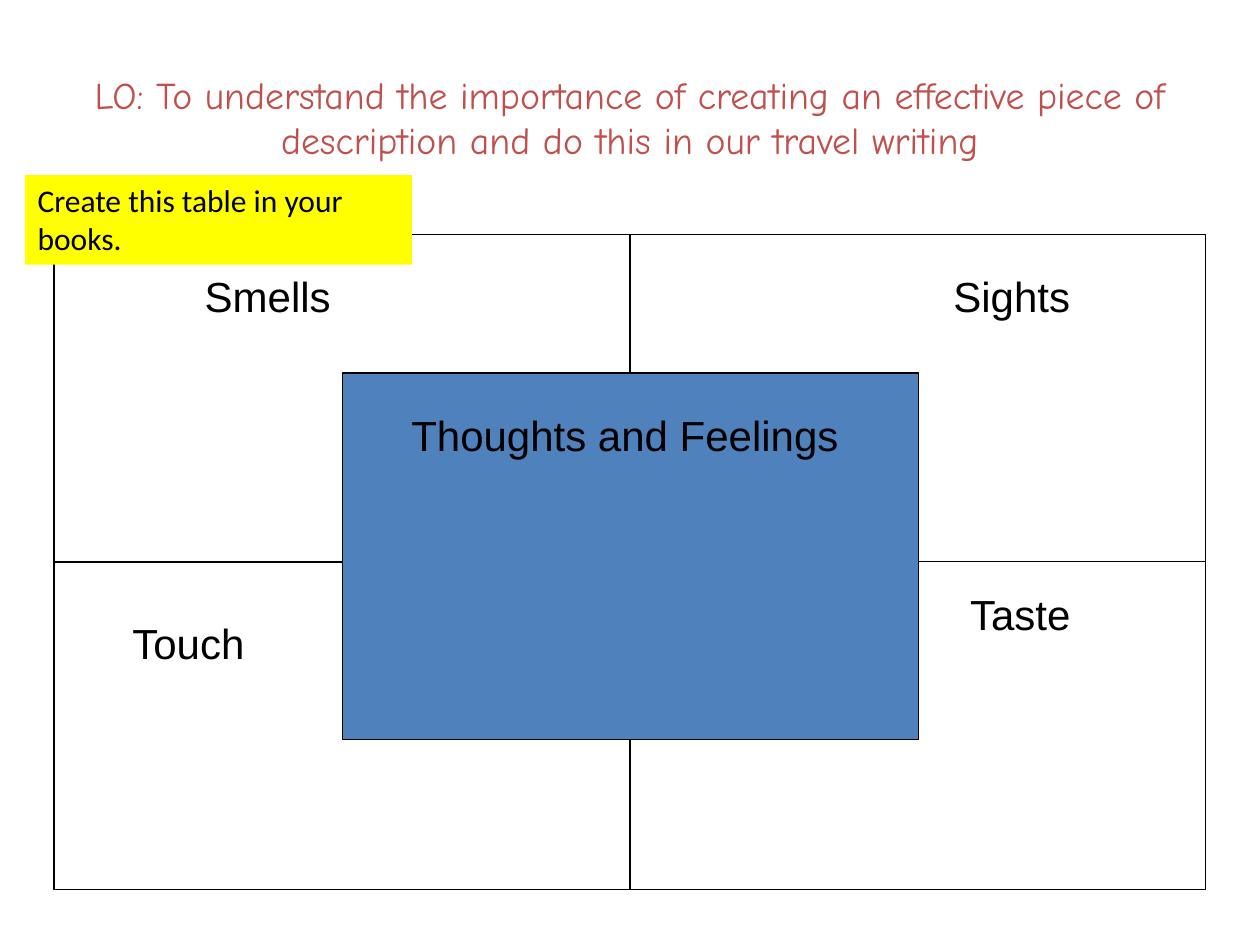
from dataclasses import dataclass
from typing import Optional

import pptx
import pptx.dml.color
import pptx.enum.shapes
import pptx.enum.text
import pptx.util

Inches = pptx.util.Inches
Align = pptx.enum.text.PP_ALIGN
Anchor = pptx.enum.text.MSO_ANCHOR


@dataclass(frozen=True)
class Theme:
    ink: str = "000000"
    title: str = "C0504D"
    centre: str = "4F81BD"
    note: str = "FFFF00"
    title_font: str = "Comic Neue"
    label_font: str = "Arial"
    note_font: str = "Calibri"
    title_pt: float = 21.6
    label_pt: float = 24
    note_pt: float = 18
    line_pt: float = 0.75


@dataclass(frozen=True)
class Box:
    left: float
    top: float
    width: float
    height: float

    def emu(self) -> tuple:
        return tuple(Inches(v) for v in (self.left, self.top, self.width, self.height))


@dataclass(frozen=True)
class Label:
    text: str
    box: Box
    align: Align = Align.CENTER


THEME = Theme()

# Two-by-two grid, with the outer frame closing the bottom right cell
LEFT, TOP, CELL_W, CELL_H = 0.43, 1.86, 4.57, 2.6
FRAME = Box(LEFT, TOP, 2 * CELL_W, 2 * CELL_H)
CELLS = [Box(LEFT + col * CELL_W, TOP + row * CELL_H, CELL_W, CELL_H)
         for row, col in ((0, 0), (0, 1), (1, 0))]
CENTRE = Box(2.72, 2.96, CELL_W, 2.91)

LABELS = [
    Label("Smells", Box(0.59, 2.1, 3.07, 0.5)),
    Label("Sights", Box(6.73, 2.1, 2.6, 0.5)),
    Label("Touch", Box(0.67, 4.85, 1.65, 0.5)),
    Label("Taste", Box(7.6, 4.62, 1.65, 0.5), Align.LEFT),
    Label("Thoughts and Feelings", Box(3.11, 3.2, 3.7, 0.5)),
]


def rgb(color: str) -> pptx.dml.color.RGBColor:
    return pptx.dml.color.RGBColor.from_string(color)


def add_rect(s, box: Box, fill: Optional[str] = None) -> None:
    sp = s.shapes.add_shape(pptx.enum.shapes.MSO_SHAPE.RECTANGLE, *box.emu())
    sp.shadow.inherit = False
    if fill:
        sp.fill.solid()
        sp.fill.fore_color.rgb = rgb(fill)
    else:
        sp.fill.background()
    sp.line.color.rgb = rgb(THEME.ink)
    sp.line.width = pptx.util.Pt(THEME.line_pt)


def add_text(s, label: Label, font: str, size: float, color: str = THEME.ink,
             anchor: Anchor = Anchor.TOP, fill: Optional[str] = None) -> None:
    sp = s.shapes.add_textbox(*label.box.emu())
    if fill:
        sp.fill.solid()
        sp.fill.fore_color.rgb = rgb(fill)
    tf = sp.text_frame
    tf.word_wrap = True
    tf.vertical_anchor = anchor
    p = tf.paragraphs[0]
    p.alignment = label.align
    r = p.add_run()
    r.text = label.text
    r.font.name = font
    r.font.size = pptx.util.Pt(size)
    r.font.color.rgb = rgb(color)


def main() -> None:
    prs = pptx.Presentation()
    prs.slide_width, prs.slide_height = Inches(10), Inches(7.5)
    s = prs.slides.add_slide(prs.slide_layouts[6])

    # Learning objective
    title = Label("LO: To understand the importance of creating an effective piece of "
                  "description and do this in our travel writing", Box(0.5, 0.3, 9, 1.25))
    add_text(s, title, THEME.title_font, THEME.title_pt, THEME.title, Anchor.MIDDLE)

    # Senses grid and centre panel
    for box in (FRAME, *CELLS):
        add_rect(s, box)
    add_rect(s, CENTRE, THEME.centre)
    for label in LABELS:
        add_text(s, label, THEME.label_font, THEME.label_pt)

    # Instruction note
    note = Label("Create this table in your books.", Box(0.2, 1.39, 3.07, 0.71), Align.LEFT)
    add_text(s, note, THEME.note_font, THEME.note_pt, fill=THEME.note)

    prs.save("out.pptx")


if __name__ == "__main__":
    main()
